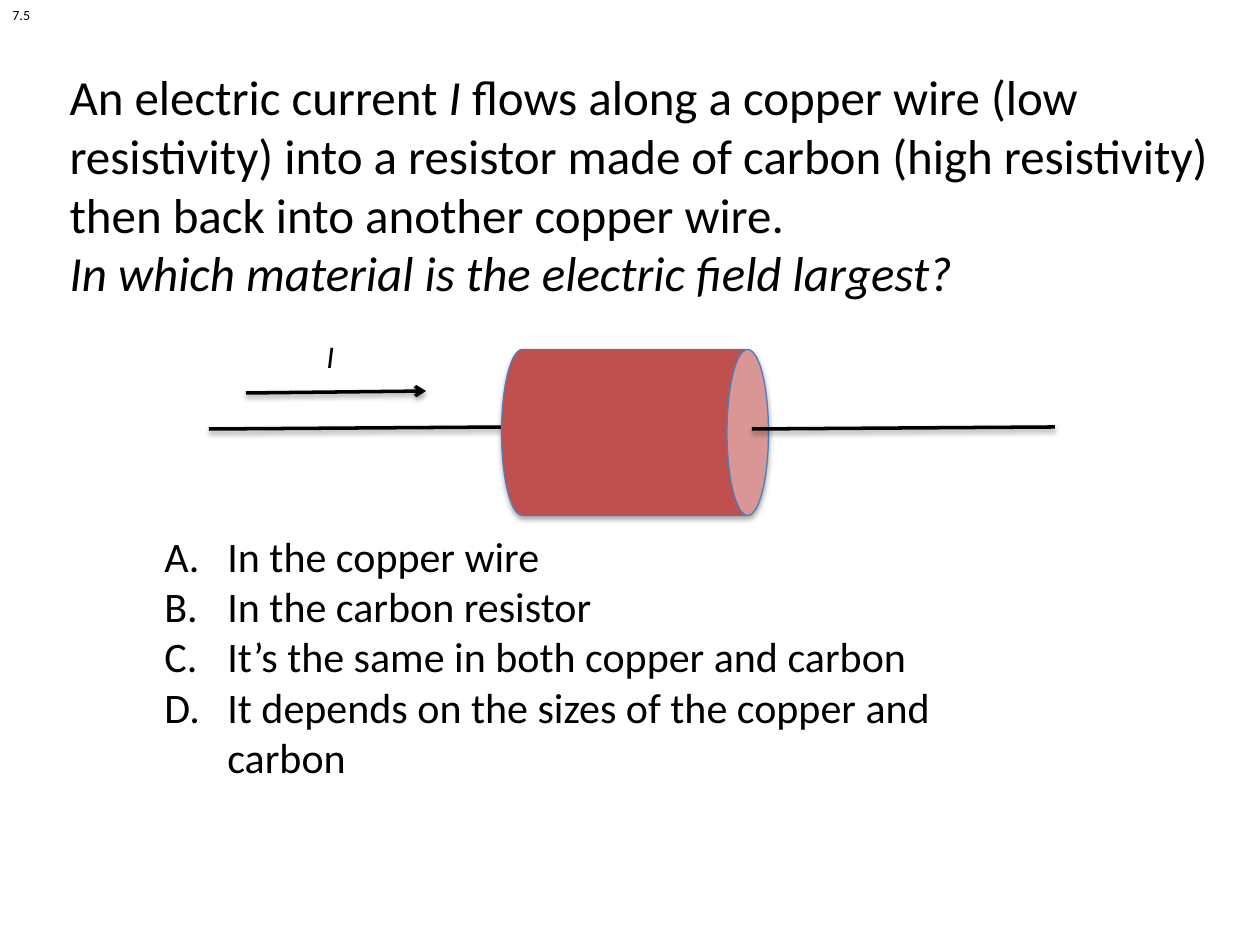
from dataclasses import dataclass

from lxml.etree import SubElement
from pptx import Presentation
from pptx.dml.color import RGBColor
from pptx.enum.shapes import MSO_CONNECTOR, MSO_SHAPE
from pptx.enum.text import MSO_ANCHOR, MSO_AUTO_SIZE, PP_ALIGN
from pptx.oxml.ns import qn
from pptx.util import Pt

SCALE = 914400 / 126


@dataclass(frozen=True)
class Theme:
    font: str = "Calibri"
    ink: str = "000000"
    carbon: str = "C0504D"
    edge: str = "4B7EBC"
    title: int = 28
    answer: int = 24
    label: int = 18
    note: int = 8
    wire: float = 2
    rim: float = 0.75


THEME = Theme()


def px(*sizes):
    return [round(size * SCALE) for size in sizes]


def color(code):
    return RGBColor.from_string(code)


def add_run(para, text, size, italic=False):
    run = para.add_run()
    run.text = text
    font = run.font
    font.name = THEME.font
    font.size = Pt(size)
    font.italic = italic
    font.color.rgb = color(THEME.ink)


def add_shade(shape, alpha, dist):
    effects = SubElement(shape._element.spPr, qn("a:effectLst"))
    shade = SubElement(effects, qn("a:outerShdw"), blurRad="40000",
                       dist=str(dist), dir="5400000", rotWithShape="0")
    tint = SubElement(shade, qn("a:srgbClr"), val=THEME.ink)
    SubElement(tint, qn("a:alpha"), val=str(alpha * 1000))


def set_title(slide, box):
    title = slide.shapes.title
    title.left, title.top, title.width, title.height = px(*box)
    frame = title.text_frame
    frame.word_wrap = True
    frame.auto_size = MSO_AUTO_SIZE.NONE
    frame.vertical_anchor = MSO_ANCHOR.MIDDLE
    para = frame.paragraphs[0]
    para.alignment = PP_ALIGN.LEFT
    add_run(para, "An electric current ", THEME.title)
    add_run(para, "I", THEME.title, True)
    add_run(para, " flows along a copper wire (low resistivity) into a resistor "
            "made of carbon (high resistivity) then back into another copper wire.",
            THEME.title)
    para.add_line_break()
    add_run(para, "In which material is the electric field largest?", THEME.title, True)


def add_label(slide, box, text, size, italic=False):
    frame = slide.shapes.add_textbox(*px(*box)).text_frame
    frame.word_wrap = False
    frame.auto_size = MSO_AUTO_SIZE.SHAPE_TO_FIT_TEXT
    add_run(frame.paragraphs[0], text, size, italic)


def add_list(slide, box, items):
    frame = slide.shapes.add_textbox(*px(*box)).text_frame
    frame.word_wrap = True
    frame.auto_size = MSO_AUTO_SIZE.SHAPE_TO_FIT_TEXT
    indent = px(63)[0]
    for index, item in enumerate(items):
        para = frame.add_paragraph() if index else frame.paragraphs[0]
        props = para._p.get_or_add_pPr()
        props.set("marL", str(indent))
        props.set("indent", str(-indent))
        SubElement(props, qn("a:buFont"), typeface="+mj-lt")
        SubElement(props, qn("a:buAutoNum"), type="alphaUcPeriod")
        add_run(para, item, THEME.answer)


def add_wire(slide, ends, arrow=False):
    wire = slide.shapes.add_connector(MSO_CONNECTOR.STRAIGHT, *px(*ends))
    wire.line.color.rgb = color(THEME.ink)
    wire.line.width = Pt(THEME.wire)
    if arrow:
        SubElement(wire.line._get_or_add_ln(), qn("a:tailEnd"), type="arrow")
    add_shade(wire, 38, 20000)


def add_can(slide, box):
    can = slide.shapes.add_shape(MSO_SHAPE.CAN, *px(*box))
    can.rotation = 90
    can.fill.solid()
    can.fill.fore_color.rgb = color(THEME.carbon)
    can.line.color.rgb = color(THEME.edge)
    can.line.width = Pt(THEME.rim)
    add_shade(can, 35, 23000)


def main():
    deck = Presentation()
    deck.slide_width, deck.slide_height = px(1260, 945)
    slide = deck.slides.add_slide(deck.slide_layouts[5])
    set_title(slide, (57, 55, 1203, 258))
    add_list(slide, (152, 524, 866, 267), (
        "In the copper wire",
        "In the carbon resistor",
        "It’s the same in both copper and carbon",
        "It depends on the sizes of the copper and carbon",
    ))
    add_wire(slide, (209, 429, 512, 427))
    add_can(slide, (552, 299, 166, 267))
    add_wire(slide, (752, 429, 1055, 427))
    add_wire(slide, (246, 393, 426, 391), arrow=True)
    add_label(slide, (314, 331, 42, 50), "I", THEME.label, True)
    add_label(slide, (0, 0, 43, 30), "7.5", THEME.note)
    deck.save("out.pptx")


if __name__ == "__main__":
    main()
